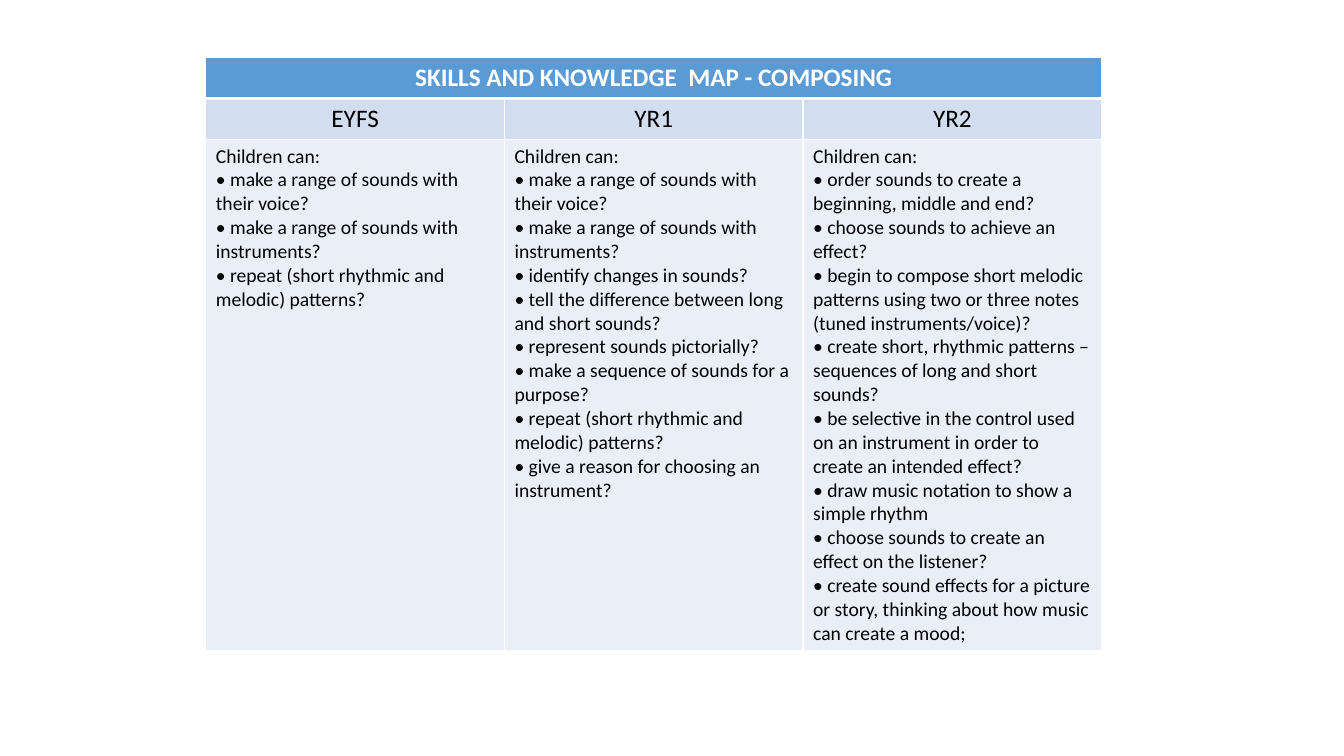
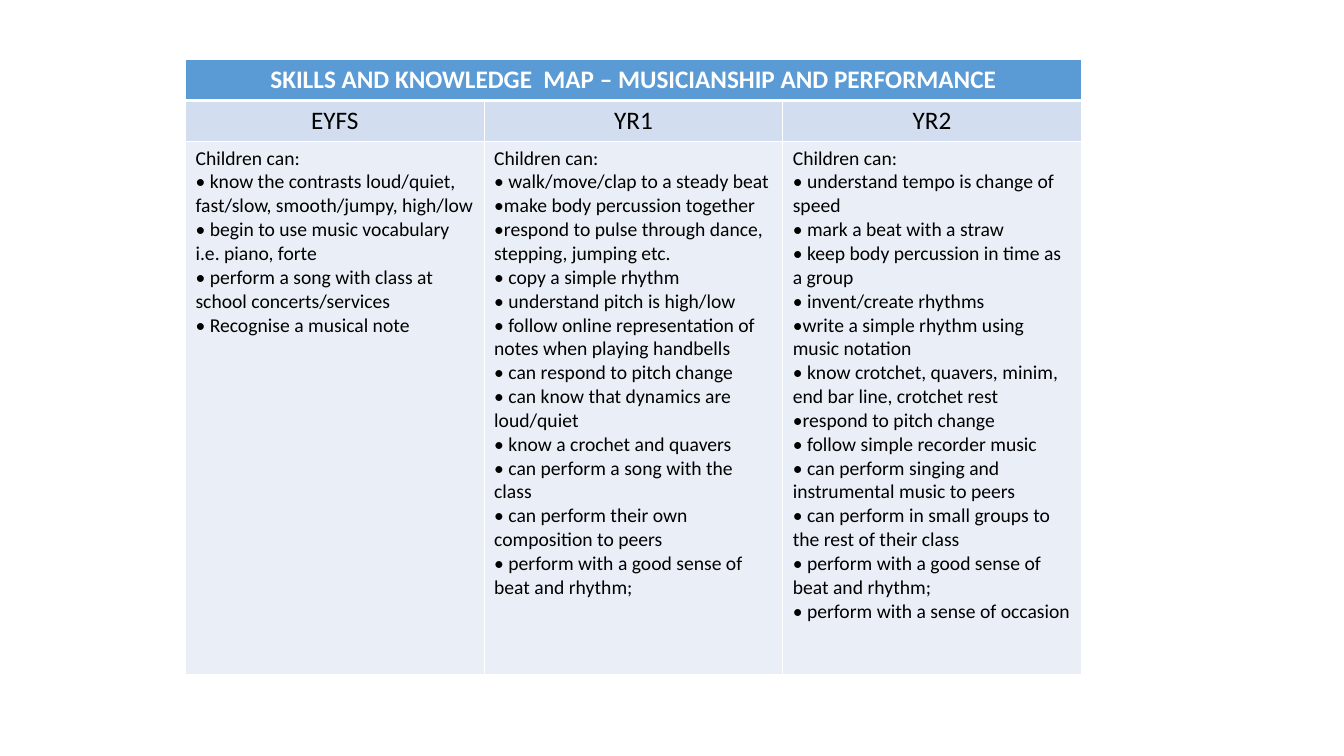
from dataclasses import dataclass

from lxml.etree import SubElement
from pptx import Presentation
from pptx.dml.color import RGBColor
from pptx.enum.text import PP_ALIGN
from pptx.oxml.ns import qn
from pptx.presentation import Presentation as Deck
from pptx.table import _Cell
from pptx.util import Pt

COLORS = {
    "title": "5B9BD5",
    "year": "D2DEEF",
    "body": "EAEFF7",
    "white": "FFFFFF",
    "black": "000000",
}
FONT = "Calibri"
YEARS = ("EYFS", "YR1", "YR2")
INTRO = "Children can:"
COLUMN_WIDTH = 213.33
HEADING_HEIGHT = 29.2


@dataclass(frozen=True)
class CellStyle:
    fill: str
    color: str
    size: int
    bold: bool = False
    align: PP_ALIGN = PP_ALIGN.CENTER
    top: int = 1
    bottom: int = 1


@dataclass(frozen=True)
class SkillsMap:
    title: str
    left: float
    top: float
    body_height: float
    skills: tuple[list[str], ...]  # one list per year


TITLE = CellStyle("title", "white", 18, bold=True, bottom=3)
YEAR = CellStyle("year", "black", 18)
FIRST_YEAR_ROW = CellStyle("year", "black", 18, top=3)
BODY = CellStyle("body", "black", 14, align=PP_ALIGN.LEFT)

MAPS = (
    SkillsMap(
        "SKILLS AND KNOWLEDGE  MAP - COMPOSING", 147, 41.2, 364.4,
        (
            [
                "• make a range of sounds with their voice?",
                "• make a range of sounds with instruments?",
                "• repeat (short rhythmic and melodic) patterns?",
            ],
            [
                "• make a range of sounds with their voice?",
                "• make a range of sounds with instruments?",
                "• identify changes in sounds?",
                "• tell the difference between long and short sounds?",
                "• represent sounds pictorially?",
                "• make a sequence of sounds for a purpose?",
                "• repeat (short rhythmic and melodic) patterns?",
                "• give a reason for choosing an instrument?",
            ],
            [
                "• order sounds to create a beginning, middle and end?",
                "• choose sounds to achieve an effect?",
                "• begin to compose short melodic patterns using two or three "
                "notes (tuned instruments/voice)?",
                "• create short, rhythmic patterns – sequences of long and "
                "short sounds?",
                "• be selective in the control used on an instrument in order "
                "to create an intended effect?",
                "• draw music notation to show a simple rhythm",
                "• choose sounds to create an effect on the listener?",
                "• create sound effects for a picture or story, thinking about "
                "how music can create a mood;",
            ],
        ),
    ),
    SkillsMap(
        "SKILLS AND KNOWLEDGE  MAP – MUSICIANSHIP AND PERFORMANCE",
        132.5, 42.6, 381,
        (
            [
                "• know the contrasts loud/quiet, fast/slow, smooth/jumpy, "
                "high/low",
                "• begin to use music vocabulary i.e. piano, forte",
                "• perform a song with class at school concerts/services",
                "• Recognise a musical note",
            ],
            [
                "• walk/move/clap to a steady beat",
                "•make body percussion together",
                "•respond to pulse through dance, stepping, jumping etc.",
                "• copy a simple rhythm",
                "• understand pitch is high/low",
                "• follow online representation of notes when playing handbells",
                "• can respond to pitch change",
                "• can know that dynamics are loud/quiet",
                "• know a crochet and quavers",
                "• can perform a song with the class",
                "• can perform their own composition to peers",
                "• perform with a good sense of beat and rhythm;",
            ],
            [
                "• understand tempo is change of speed",
                "• mark a beat with a straw",
                "• keep body percussion in time as a group",
                "• invent/create rhythms",
                "•write a simple rhythm using music notation",
                "• know crotchet, quavers, minim, end bar line, crotchet rest",
                "•respond to pitch change",
                "• follow simple recorder music",
                "• can perform singing and instrumental music to peers",
                "• can perform in small groups to the rest of their class",
                "• perform with a good sense of beat and rhythm;",
                "• perform with a sense of occasion",
            ],
        ),
    ),
)


def set_borders(cell: _Cell, style: CellStyle) -> None:
    tc_pr = cell._tc.get_or_add_tcPr()
    widths = {"lnL": 1, "lnR": 1, "lnT": style.top, "lnB": style.bottom}
    for side, width in widths.items():
        ln = SubElement(tc_pr, qn(f"a:{side}"), w=str(Pt(width)))
        fill = SubElement(ln, qn("a:solidFill"))
        SubElement(fill, qn("a:srgbClr"), val=COLORS["white"])


def format_cell(cell: _Cell, lines: list[str], style: CellStyle) -> None:
    set_borders(cell, style)
    cell.fill.solid()
    cell.fill.fore_color.rgb = RGBColor.from_string(COLORS[style.fill])
    tf = cell.text_frame
    tf.text = "\n".join(lines)
    for p in tf.paragraphs:
        p.alignment = style.align
        p.font.name = FONT
        p.font.size = Pt(style.size)
        p.font.bold = style.bold
        p.font.color.rgb = RGBColor.from_string(COLORS[style.color])


def add_skills_map(prs: Deck, skills_map: SkillsMap) -> None:
    s = prs.slides.add_slide(prs.slide_layouts[6])
    heights = (HEADING_HEIGHT, HEADING_HEIGHT, skills_map.body_height)
    table = s.shapes.add_table(
        len(heights), len(YEARS), Pt(skills_map.left), Pt(skills_map.top),
        Pt(COLUMN_WIDTH * len(YEARS)), Pt(sum(heights)),
    ).table
    table.horz_banding = False
    for row, height in zip(table.rows, heights):
        row.height = Pt(height)

    # Title across all years
    table.cell(0, 0).merge(table.cell(0, len(YEARS) - 1))
    format_cell(table.cell(0, 0), [skills_map.title], TITLE)

    # One column per year
    for col, (year, skills) in enumerate(zip(YEARS, skills_map.skills)):
        table.columns[col].width = Pt(COLUMN_WIDTH)
        format_cell(table.cell(1, col), [year], FIRST_YEAR_ROW)
        format_cell(table.cell(2, col), [INTRO, *skills], BODY)


def main() -> None:
    prs = Presentation()
    prs.slide_width, prs.slide_height = Pt(960), Pt(540)
    for skills_map in MAPS:
        add_skills_map(prs, skills_map)
    prs.save("out.pptx")


if __name__ == "__main__":
    main()
